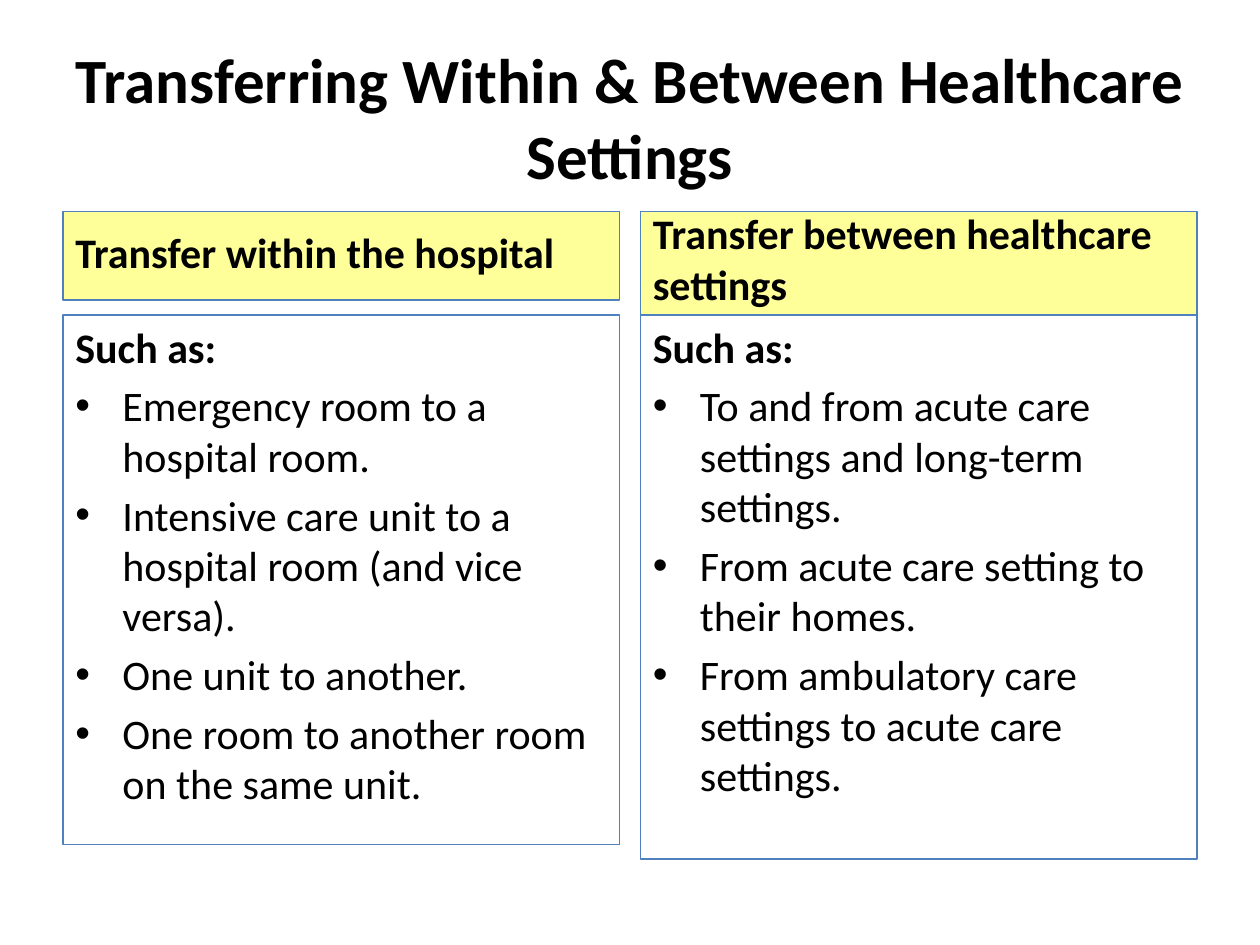
from pptx import Presentation
from pptx.dml.color import RGBColor
from pptx.enum.shapes import MSO_SHAPE
from pptx.enum.text import MSO_ANCHOR, PP_ALIGN
from pptx.oxml.ns import qn
from pptx.util import Cm, Pt
from lxml import etree

RECT = MSO_SHAPE.RECTANGLE
TOP, MIDDLE, BOTTOM = MSO_ANCHOR.TOP, MSO_ANCHOR.MIDDLE, MSO_ANCHOR.BOTTOM
LEFT, CENTER = PP_ALIGN.LEFT, PP_ALIGN.CENTER

COLORS = {"text": "000000", "head": "FFFF99", "line": "4F81BD"}
FONT = "Calibri"
MARGIN, WIDTH = 1.27, 11.22
HEAD_TOP, LIST_TOP = 4.27, 6.35
INDENT = 0.95

# heading, heading height, space under heading text, list height, items
COLUMNS = [
    ("Transfer within the hospital", 1.78, 0.47, 10.67, [
        "Emergency room to a hospital room.",
        "Intensive care unit to a hospital room (and vice versa).",
        "One unit to another.",
        "One room to another room on the same unit.",
    ]),
    ("Transfer between healthcare settings", 2.08, 0.13, 10.97, [
        "To and from acute care settings and long-term settings.",
        "From acute care setting to their homes.",
        "From ambulatory care settings to acute care settings.",
    ]),
]


def color(name):
    return RGBColor.from_string(COLORS[name])


def style(para, size, bold, align=LEFT):
    para.alignment = align
    font = para.font
    font.name, font.size, font.bold = FONT, Pt(size), bold
    font.color.rgb = color("text")


def add_bullet(para):
    props = para._p.get_or_add_pPr()
    props.set("marL", str(Cm(INDENT)))
    props.set("indent", str(-Cm(INDENT)))
    etree.SubElement(props, qn("a:buFont"), typeface="Arial")
    etree.SubElement(props, qn("a:buChar"), char="•")


def add_title(slide, x, y, w, h):
    box = slide.shapes.add_textbox(Cm(x), Cm(y), Cm(w), Cm(h))
    frame = box.text_frame
    frame.word_wrap = True
    frame.vertical_anchor = MIDDLE
    para = frame.paragraphs[0]
    para.text = "Transferring Within & Between Healthcare Settings"
    style(para, 36, True, CENTER)


def add_panel(slide, x, y, w, h, fill=None):
    """Add an outlined box and return its text frame."""
    box = slide.shapes.add_shape(RECT, Cm(x), Cm(y), Cm(w), Cm(h))
    box.shadow.inherit = False
    box.line.color.rgb = color("line")
    box.line.width = Pt(0.75)
    if fill:
        box.fill.solid()
        box.fill.fore_color.rgb = color(fill)
    else:
        box.fill.background()
    frame = box.text_frame
    frame.word_wrap = True
    return frame


def add_head(slide, x, y, w, h, text, foot):
    frame = add_panel(slide, x, y, w, h, "head")
    frame.vertical_anchor = BOTTOM
    frame.margin_bottom = Cm(foot)
    para = frame.paragraphs[0]
    para.text = text
    style(para, 24, True)


def add_list(slide, x, y, w, h, items):
    frame = add_panel(slide, x, y, w, h)
    frame.vertical_anchor = TOP
    lead = frame.paragraphs[0]
    lead.text = "Such as:"
    style(lead, 24, True)
    for item in items:
        para = frame.add_paragraph()
        para.text = item
        para.space_before = Pt(4.8)
        style(para, 24, False)
        add_bullet(para)


def main():
    deck = Presentation()
    deck.slide_width, deck.slide_height = Cm(25.4), Cm(19.05)
    slide = deck.slides.add_slide(deck.slide_layouts[6])
    full = 25.4 - 2 * MARGIN
    add_title(slide, MARGIN, 0.76, full, 3.18)
    step = full - WIDTH
    for i, (head, head_h, foot, list_h, items) in enumerate(COLUMNS):
        x = MARGIN + i * step
        add_head(slide, x, HEAD_TOP, WIDTH, head_h, head, foot)
        add_list(slide, x, LIST_TOP, WIDTH, list_h, items)
    deck.save("out.pptx")


if __name__ == "__main__":
    main()
